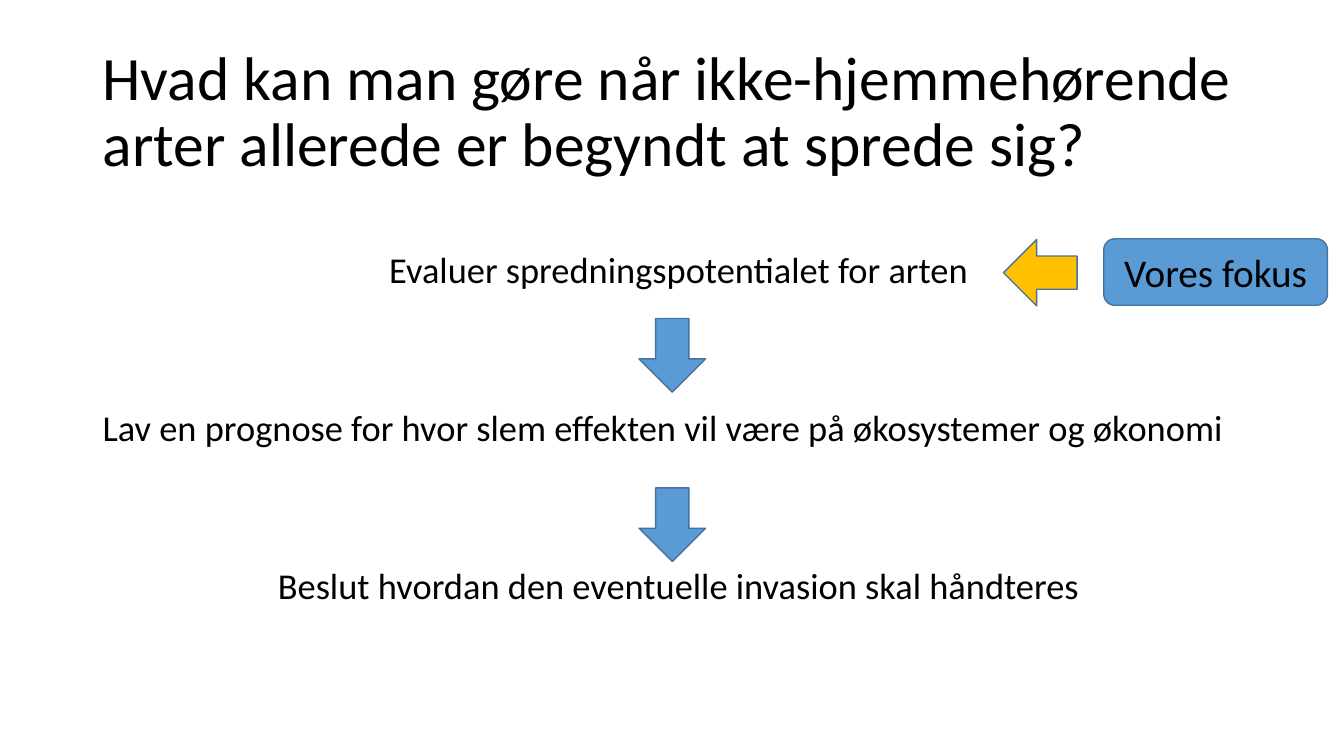
"""Build a slide on the steps for handling non-native species that already spread."""
from dataclasses import dataclass

from pptx import Presentation
from pptx.dml.color import RGBColor
from pptx.enum.shapes import MSO_SHAPE
from pptx.enum.text import MSO_ANCHOR, PP_ALIGN
from pptx.shapes.autoshape import Shape
from pptx.slide import Slide
from pptx.text.text import _Paragraph as Paragraph
from pptx.util import Pt

COLORS = {
    "text": "000000",
    "blue": "5B9BD5",
    "gold": "FFC000",
    "outline": "43739E",
}
FONT = "Calibri"
CONTENT_LEFT, CONTENT_WIDTH = 66.24, 837.4
ARROW_WIDTH, ARROW_HEIGHT = 47.5, 52.6


@dataclass(frozen=True)
class Step:
    text: str
    alignment: PP_ALIGN
    space_before: float


@dataclass(frozen=True)
class Arrow:
    left: float
    top: float
    fill: str
    rotation: float = 0


TITLE = "Hvad kan man gøre når ikke-hjemmehørende arter allerede er begyndt at sprede sig?"
STEPS = [
    Step("Evaluer spredningspotentialet for arten", PP_ALIGN.CENTER, 10),
    Step(
        "Lav en prognose for hvor slem effekten vil være på økosystemer og økonomi",
        PP_ALIGN.LEFT,
        66,
    ),
    Step("Beslut hvordan den eventuelle invasion skal håndteres", PP_ALIGN.CENTER, 66),
]
ARROWS = [
    Arrow(456.5, 227.5, "blue"),
    Arrow(456.5, 348.5, "blue"),
    Arrow(719.3, 168.5, "gold", 90),
]


def write(paragraph: Paragraph, text: str, size: float, alignment: PP_ALIGN) -> None:
    paragraph.text = text
    paragraph.alignment = alignment
    paragraph.font.name = FONT
    paragraph.font.size = Pt(size)
    paragraph.font.color.rgb = RGBColor.from_string(COLORS["text"])


def add_content_box(slide: Slide, top: float, height: float) -> Shape:
    box = slide.shapes.add_textbox(
        Pt(CONTENT_LEFT), Pt(top), Pt(CONTENT_WIDTH), Pt(height)
    )
    box.text_frame.word_wrap = True
    return box


def add_title(slide: Slide) -> None:
    frame = add_content_box(slide, 28.8, 104.4).text_frame
    frame.vertical_anchor = MSO_ANCHOR.MIDDLE
    paragraph = frame.paragraphs[0]
    write(paragraph, TITLE, 44, PP_ALIGN.LEFT)
    paragraph.line_spacing = 0.9


def add_steps(slide: Slide) -> None:
    frame = add_content_box(slide, 157.7, 340.6).text_frame
    for index, step in enumerate(STEPS):
        paragraph = frame.add_paragraph() if index else frame.paragraphs[0]
        write(paragraph, step.text, 26, step.alignment)
        paragraph.line_spacing = 1.5
        paragraph.space_before = Pt(step.space_before)


def add_filled_shape(
    slide: Slide,
    kind: MSO_SHAPE,
    left: float,
    top: float,
    width: float,
    height: float,
    fill: str,
) -> Shape:
    shape = slide.shapes.add_shape(kind, Pt(left), Pt(top), Pt(width), Pt(height))
    shape.shadow.inherit = False
    shape.fill.solid()
    shape.fill.fore_color.rgb = RGBColor.from_string(COLORS[fill])
    shape.line.color.rgb = RGBColor.from_string(COLORS["outline"])
    shape.line.width = Pt(1)
    return shape


def add_arrow(slide: Slide, arrow: Arrow) -> None:
    shape = add_filled_shape(
        slide, MSO_SHAPE.DOWN_ARROW, arrow.left, arrow.top,
        ARROW_WIDTH, ARROW_HEIGHT, arrow.fill,
    )
    shape.rotation = arrow.rotation


def add_focus_label(slide: Slide) -> None:
    label = add_filled_shape(
        slide, MSO_SHAPE.ROUNDED_RECTANGLE, 788.4, 170.6, 159.8, 47.5, "blue"
    )
    label.text_frame.word_wrap = False
    label.text_frame.vertical_anchor = MSO_ANCHOR.MIDDLE
    write(label.text_frame.paragraphs[0], "Vores fokus", 28, PP_ALIGN.CENTER)


def main() -> None:
    presentation = Presentation()
    presentation.slide_width, presentation.slide_height = Pt(960), Pt(540)
    slide = presentation.slides.add_slide(presentation.slide_layouts[6])
    add_title(slide)
    add_steps(slide)
    for arrow in ARROWS:
        add_arrow(slide, arrow)
    add_focus_label(slide)
    presentation.save("out.pptx")


if __name__ == "__main__":
    main()
